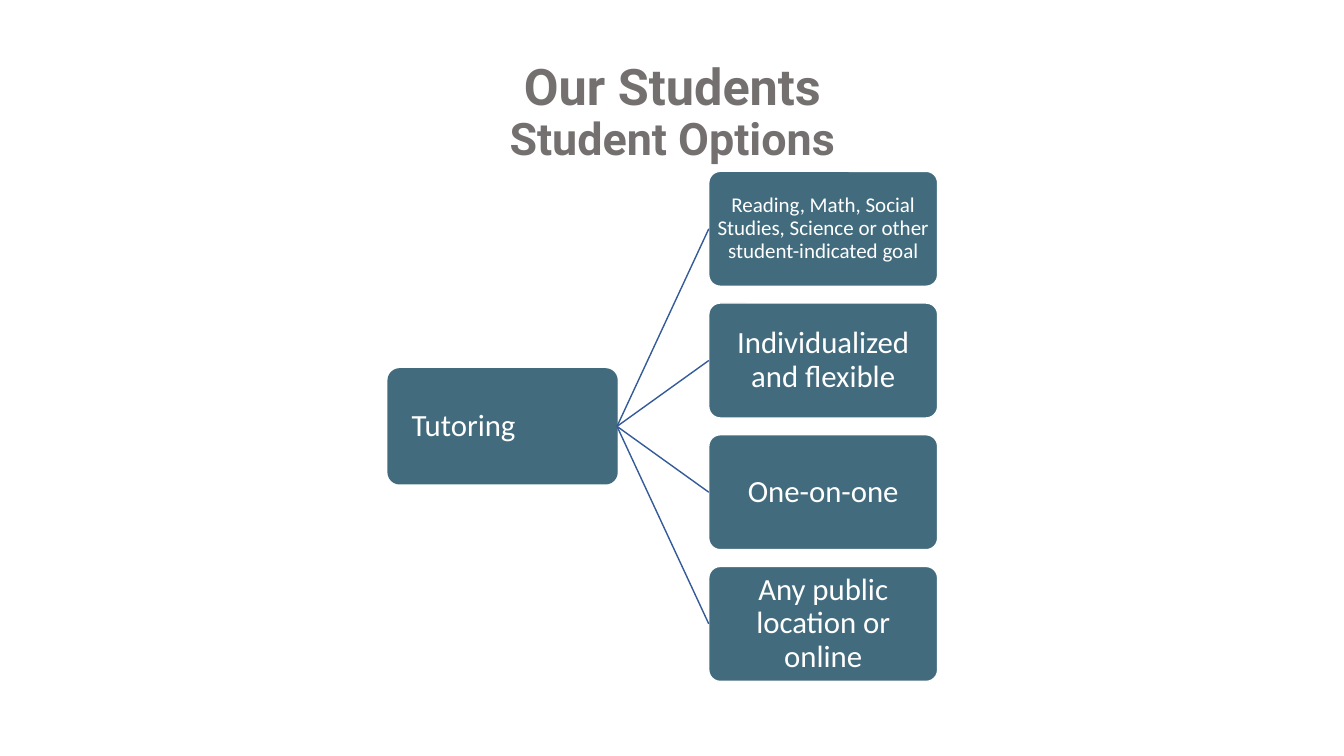
from dataclasses import dataclass

from lxml.etree import SubElement
from pptx import Presentation
from pptx.dml.color import RGBColor
from pptx.enum.shapes import MSO_CONNECTOR, MSO_SHAPE
from pptx.enum.text import MSO_ANCHOR, MSO_AUTO_SIZE, PP_ALIGN
from pptx.oxml.ns import qn
from pptx.util import Inches, Pt


@dataclass(frozen=True)
class Theme:
    heading_font: str = "Roboto"
    body_font: str = "Calibri"
    heading: RGBColor = RGBColor(0x75, 0x70, 0x70)
    box: RGBColor = RGBColor(0x42, 0x6C, 0x7D)
    branch: RGBColor = RGBColor(0x34, 0x5A, 0x99)
    white: RGBColor = RGBColor(0xFF, 0xFF, 0xFF)
    title_size: int = 36
    subtitle_size: int = 32
    body_size: int = 22
    small_size: int = 15
    line_spacing: float = 0.9


THEME = Theme()
BOX_WIDTH, BOX_HEIGHT = 2.27, 1.14
OPTIONS = [
    ("Reading, Math, Social Studies, Science or other student-indicated goal", THEME.small_size),
    ("Individualized and flexible", THEME.body_size),
    ("One-on-one", THEME.body_size),
    ("Any public location or online", THEME.body_size),
]


def add_run(paragraph, text, size, font_name, color, bold=False):
    run = paragraph.add_run()
    run.text = text
    run.font.size = Pt(size)
    run.font.name = font_name
    run.font.bold = bold
    run.font.color.rgb = color


def format_frame(frame, alignment, side_inset, left_inset=None):
    frame.word_wrap = True
    frame.auto_size = MSO_AUTO_SIZE.NONE
    frame.vertical_anchor = MSO_ANCHOR.MIDDLE
    frame.margin_left = Inches(side_inset if left_inset is None else left_inset)
    frame.margin_right = Inches(side_inset)
    frame.margin_top = frame.margin_bottom = Inches(0.05)
    paragraph = frame.paragraphs[0]
    paragraph.alignment = alignment
    paragraph.line_spacing = THEME.line_spacing
    return paragraph


def add_title(slide, left, top, width, height):
    title = slide.shapes.title
    title.left, title.top = Inches(left), Inches(top)
    title.width, title.height = Inches(width), Inches(height)
    paragraph = format_frame(title.text_frame, PP_ALIGN.CENTER, 0.1)
    add_run(paragraph, "Our Students", THEME.title_size, THEME.heading_font, THEME.heading, True)
    paragraph.add_line_break()
    add_run(paragraph, "Student Options", THEME.subtitle_size, THEME.heading_font, THEME.heading, True)


def add_box(slide, left, top, text, size, outline, alignment=PP_ALIGN.CENTER, left_inset=None):
    shape = slide.shapes.add_shape(
        MSO_SHAPE.ROUNDED_RECTANGLE, Inches(left), Inches(top), Inches(BOX_WIDTH), Inches(BOX_HEIGHT)
    )
    shape.adjustments[0] = 0.1
    shape.shadow.inherit = False
    shape.fill.solid()
    shape.fill.fore_color.rgb = THEME.box
    shape.line.color.rgb = outline
    shape.line.width = Pt(1)
    paragraph = format_frame(shape.text_frame, alignment, 0.05, left_inset)
    add_run(paragraph, text, size, THEME.body_font, THEME.white)
    return shape


def add_branch(slide, parent, child):
    connector = slide.shapes.add_connector(MSO_CONNECTOR.STRAIGHT, 0, 0, 0, 0)
    connector.begin_connect(parent, 3)
    connector.end_connect(child, 1)
    connector.line.color.rgb = THEME.branch
    connector.line.width = Pt(1)
    SubElement(connector.element.spPr, qn("a:effectLst"))


def add_tree(slide, left, top, width, height):
    root = add_box(
        slide, left, top + (height - BOX_HEIGHT) / 2, "Tutoring", THEME.body_size,
        THEME.box, PP_ALIGN.LEFT, 0.2,
    )
    pitch = (height - BOX_HEIGHT) / (len(OPTIONS) - 1)
    for index, (text, size) in enumerate(OPTIONS):
        option = add_box(
            slide, left + width - BOX_WIDTH, top + index * pitch, text, size, THEME.white
        )
        add_branch(slide, root, option)


def main():
    presentation = Presentation()
    presentation.slide_width, presentation.slide_height = Inches(13.33), Inches(7.5)
    slide = presentation.slides.add_slide(presentation.slide_layouts[5])
    add_title(slide, 0.92, 0.4, 11.5, 1.45)
    add_tree(slide, 3.85, 1.7, 5.45, 5.06)
    presentation.save("out.pptx")


if __name__ == "__main__":
    main()
